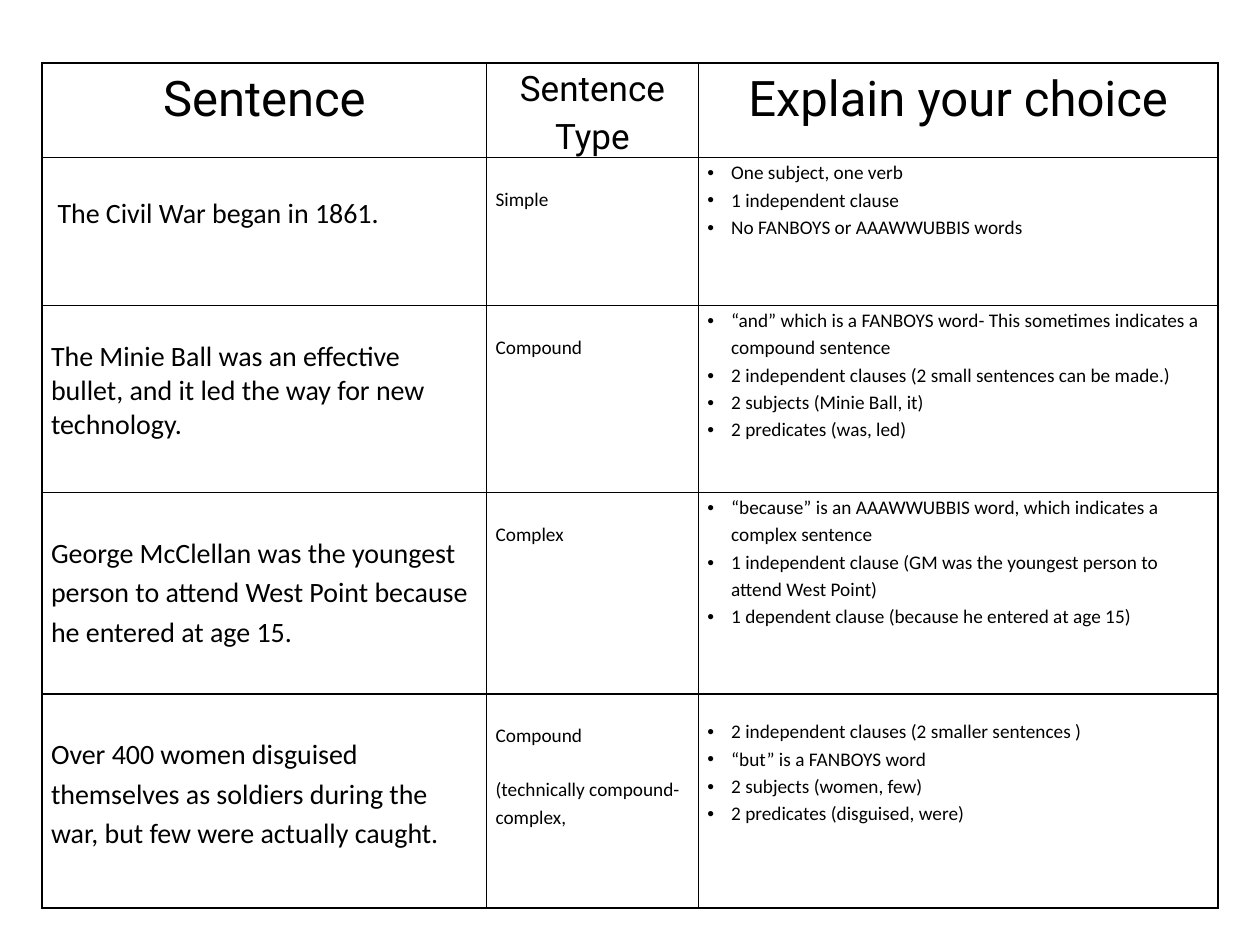
from dataclasses import dataclass

from lxml.etree import SubElement
from pptx import Presentation
from pptx.dml.color import RGBColor
from pptx.enum.text import PP_ALIGN
from pptx.oxml.ns import qn
from pptx.util import Cm, Pt


@dataclass(frozen=True)
class Theme:
    ink: str = "000000"
    rule: float = 1
    head: str = "Roboto"
    body: str = "Calibri"
    big: int = 28
    mid: int = 20
    main: int = 16
    note: int = 11
    lead: float = 1.15


theme = Theme()


def write(cell, text, size, font=theme.body, align=PP_ALIGN.LEFT,
          lead=theme.lead, top=0, left=0.18, gap=0, bullet=False):
    cell.margin_left, cell.margin_right = Cm(left), Cm(0.18)
    cell.margin_top, cell.margin_bottom = Cm(top), Cm(0)
    frame = cell.text_frame
    for n, line in enumerate(text.split("\n")):
        para = frame.add_paragraph() if n else frame.paragraphs[0]
        para.alignment = align
        para.line_spacing = lead
        if n and gap:
            para.space_before = Pt(gap)
        if bullet:
            props = para._p.get_or_add_pPr()
            props.set("marL", str(Cm(0.48)))
            props.set("indent", str(Cm(-0.48)))
            SubElement(props, qn("a:buFont"), typeface="Arial")
            SubElement(props, qn("a:buChar"), char="•")
        run = para.add_run()
        run.text = line
        run.font.name = font
        run.font.size = Pt(size)
        run.font.bold = False
        run.font.color.rgb = RGBColor.from_string(theme.ink)


def frame_cell(cell):
    props = cell._tc.get_or_add_tcPr()
    for side in ("lnL", "lnR", "lnT", "lnB"):
        edge = SubElement(props, qn(f"a:{side}"), w=str(Pt(theme.rule)))
        fill = SubElement(edge, qn("a:solidFill"))
        SubElement(fill, qn("a:srgbClr"), val=theme.ink)
    cell.fill.background()


deck = Presentation()
deck.slide_width, deck.slide_height = Cm(25.4), Cm(19.05)
slide = deck.slides.add_slide(deck.slide_layouts[6])

widths = [8.96, 4.27, 10.47]
heights = [1.89, 2.98, 3.77, 4.06, 4.32]
table = slide.shapes.add_table(
    len(heights), len(widths), Cm(0.85), Cm(1.27),
    Cm(sum(widths)), Cm(sum(heights))).table
table.first_row = False
table.horz_banding = False
for col, width in zip(table.columns, widths):
    col.width = Cm(width)
for row, height in zip(table.rows, heights):
    row.height = Cm(height)
for cell in table.iter_cells():
    frame_cell(cell)

heads = [("Sentence", theme.big), ("Sentence Type", theme.mid),
         ("Explain your choice", theme.big)]
for n, (text, size) in enumerate(heads):
    write(table.cell(0, n), text, size, font=theme.head, align=PP_ALIGN.CENTER)

rows = [
    ("The Civil War began in 1861.",
     dict(top=0.79, left=0.31, lead=1),
     "Simple",
     "One subject, one verb\n"
     "1 independent clause\n"
     "No FANBOYS or AAAWWUBBIS words", 0),
    ("The Minie Ball was an effective bullet, and it led the way for new technology.",
     dict(top=0.69, lead=1),
     "Compound",
     "“and” which is a FANBOYS word- This sometimes indicates a compound sentence\n"
     "2 independent clauses (2 small sentences can be made.)\n"
     "2 subjects (Minie Ball, it)\n"
     "2 predicates (was, led)", 0),
    ("George McClellan was the youngest person to attend West Point "
     "because he entered at age 15.",
     dict(top=0.79),
     "Complex",
     "“because” is an AAAWWUBBIS word, which indicates a complex sentence\n"
     "1 independent clause (GM was the youngest person to attend West Point)\n"
     "1 dependent clause (because he entered at age 15)", 0),
    ("Over 400 women disguised themselves as soldiers during the war, "
     "but few were actually caught.",
     dict(top=0.79),
     "Compound\n(technically compound-complex,",
     "2 independent clauses (2 smaller sentences )\n"
     "“but” is a FANBOYS word\n"
     "2 subjects (women, few)\n"
     "2 predicates (disguised, were)", 0.46),
]
for n, (text, form, kind, why, top) in enumerate(rows, 1):
    write(table.cell(n, 0), text, theme.main, **form)
    write(table.cell(n, 1), kind, theme.note, top=0.54, gap=15.4)
    write(table.cell(n, 2), why, theme.note, top=top, bullet=True)

deck.save("out.pptx")
